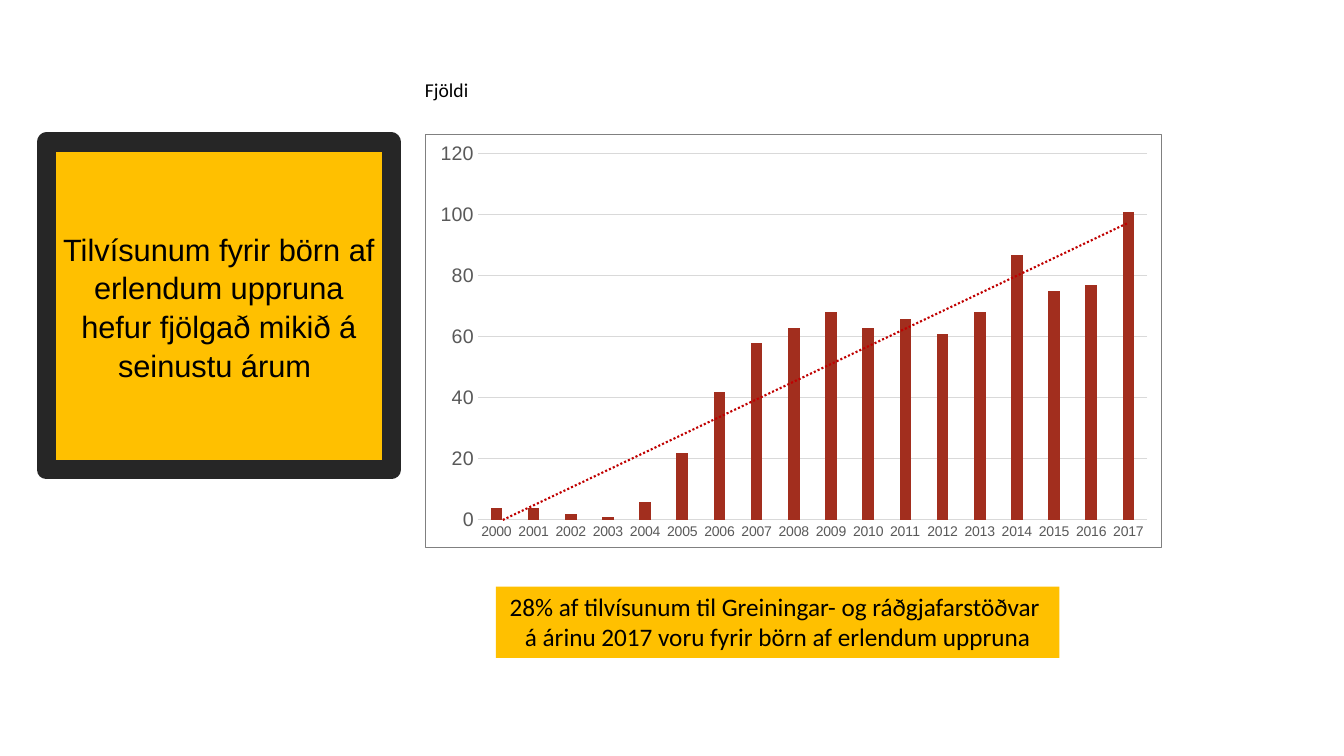
from dataclasses import dataclass

from lxml.etree import fromstring
from pptx import Presentation
from pptx.chart.chart import Chart
from pptx.chart.data import CategoryChartData
from pptx.dml.color import RGBColor
from pptx.dml.line import LineFormat
from pptx.enum.chart import XL_CHART_TYPE, XL_TICK_MARK
from pptx.enum.text import MSO_ANCHOR, MSO_AUTO_SIZE, PP_ALIGN
from pptx.oxml import parse_xml
from pptx.oxml.ns import nsdecls, qn
from pptx.slide import Slide
from pptx.text.text import Font
from pptx.util import Cm, Pt

COLOURS = {
    "text": "000000",
    "highlight": "FFC000",
    "outline": "262626",
    "bar": "A22E1E",
    "trend": "C00000",
    "grid": "D9D9D9",
    "axis_text": "595959",
    "border": "808080",
}
YEARS = range(2000, 2018)
REFERRALS = (4, 4, 2, 1, 6, 22, 42, 58, 63, 68, 63, 66, 61, 68, 87, 75, 77, 101)


@dataclass(frozen=True)
class Frame:
    left: float
    top: float
    width: float
    height: float

    def lengths(self) -> tuple[Cm, Cm, Cm, Cm]:
        return Cm(self.left), Cm(self.top), Cm(self.width), Cm(self.height)


@dataclass(frozen=True)
class Label:
    frame: Frame
    lines: tuple[str, ...]
    size: int
    alignment: PP_ALIGN
    fill: str | None = None


TITLE_FRAME = Frame(1.17, 3.58, 8.69, 8.26)
CHART_FRAME = Frame(10.72, 3.38, 18.57, 10.44)
LABELS = (
    Label(Frame(10.46, 1.83, 1.63, 0.86), ("Fjöldi",), 14, PP_ALIGN.LEFT),
    Label(
        Frame(12.5, 14.78, 14.2, 1.8),
        (
            "28% af tilvísunum til Greiningar- og ráðgjafarstöðvar ",
            "á árinu 2017 voru fyrir börn af erlendum uppruna",
        ),
        18,
        PP_ALIGN.CENTER,
        "highlight",
    ),
)


def colour(name: str) -> RGBColor:
    return RGBColor.from_string(COLOURS[name])


def style_font(font: Font, name: str, size: int, shade: str) -> None:
    font.name = name
    font.size = Pt(size)
    font.bold = False
    font.color.rgb = colour(shade)


def style_line(line: LineFormat, shade: str, width: float) -> None:
    line.color.rgb = colour(shade)
    line.width = Pt(width)


def add_title(page: Slide) -> None:
    """Turn the title placeholder into the outlined ellipse."""
    title = page.shapes.title
    title.left, title.top, title.width, title.height = TITLE_FRAME.lengths()
    ellipse = parse_xml(f'<a:prstGeom {nsdecls("a")} prst="ellipse"><a:avLst/></a:prstGeom>')
    title.element.spPr.find(qn("a:xfrm")).addnext(ellipse)
    title.fill.solid()
    title.fill.fore_color.rgb = colour("highlight")
    style_line(title.line, "outline", 13.75)
    text = title.text_frame
    text.word_wrap = True
    text.auto_size = MSO_AUTO_SIZE.NONE
    text.vertical_anchor = MSO_ANCHOR.MIDDLE
    para = text.paragraphs[0]
    para.alignment = PP_ALIGN.CENTER
    para.line_spacing = 1.05
    span = para.add_run()
    span.text = "Tilvísunum fyrir börn af erlendum uppruna hefur fjölgað mikið á seinustu árum "
    style_font(span.font, "Arial", 22, "text")


def add_label(page: Slide, label: Label) -> None:
    box = page.shapes.add_textbox(*label.frame.lengths())
    if label.fill:
        box.fill.solid()
        box.fill.fore_color.rgb = colour(label.fill)
    text = box.text_frame
    text.word_wrap = False
    text.auto_size = MSO_AUTO_SIZE.SHAPE_TO_FIT_TEXT
    for index, line in enumerate(label.lines):
        para = text.add_paragraph() if index else text.paragraphs[0]
        para.alignment = label.alignment
        span = para.add_run()
        span.text = line
        style_font(span.font, "Calibri", label.size, "text")


def line_properties(shade: str, width: float, dash: str) -> str:
    return (
        f'<c:spPr {nsdecls("c", "a")}><a:ln w="{Pt(width)}"><a:solidFill>'
        f'<a:srgbClr val="{COLOURS[shade]}"/></a:solidFill>'
        f'<a:prstDash val="{dash}"/></a:ln></c:spPr>'
    )


def add_border_and_trend(chart: Chart) -> None:
    """Add the chart parts that python-pptx has no method for."""
    chart_space = chart.element
    chart_space.find(qn("c:chart")).addnext(fromstring(line_properties("border", 0.75, "solid")))
    trend = fromstring(
        f'<c:trendline {nsdecls("c")}>{line_properties("trend", 1.5, "sysDot")}'
        '<c:trendlineType val="linear"/><c:dispRSqr val="0"/><c:dispEq val="0"/></c:trendline>'
    )
    next(chart_space.iter(qn("c:cat"))).addprevious(trend)


def add_referral_chart(page: Slide) -> None:
    data = CategoryChartData()
    data.categories = [str(year) for year in YEARS]
    data.add_series("Series 1", REFERRALS)
    chart = page.shapes.add_chart(
        XL_CHART_TYPE.COLUMN_CLUSTERED, *CHART_FRAME.lengths(), data
    ).chart
    chart.has_title = False
    chart.has_legend = False
    style_font(chart.font, "Arial", 10, "text")

    plot = chart.plots[0]
    plot.vary_by_categories = False
    plot.gap_width = 219
    plot.overlap = -27
    bars = plot.series[0].format.fill
    bars.solid()
    bars.fore_color.rgb = colour("bar")

    for axis, size in ((chart.category_axis, 10), (chart.value_axis, 14)):
        axis.major_tick_mark = XL_TICK_MARK.NONE
        axis.minor_tick_mark = XL_TICK_MARK.NONE
        style_font(axis.tick_labels.font, "Arial", size, "axis_text")
    style_line(chart.category_axis.format.line, "grid", 0.75)

    values = chart.value_axis
    values.minimum_scale = 0
    values.maximum_scale = 120
    values.major_unit = 20
    values.format.line.fill.background()
    style_line(values.major_gridlines.format.line, "grid", 0.75)
    add_border_and_trend(chart)


def main() -> None:
    deck = Presentation()
    deck.slide_width = Cm(33.87)
    deck.slide_height = Cm(19.05)
    page = deck.slides.add_slide(deck.slide_layouts.get_by_name("Title Only"))
    add_title(page)
    for label in LABELS:
        add_label(page, label)
    add_referral_chart(page)
    deck.save("out.pptx")


if __name__ == "__main__":
    main()
